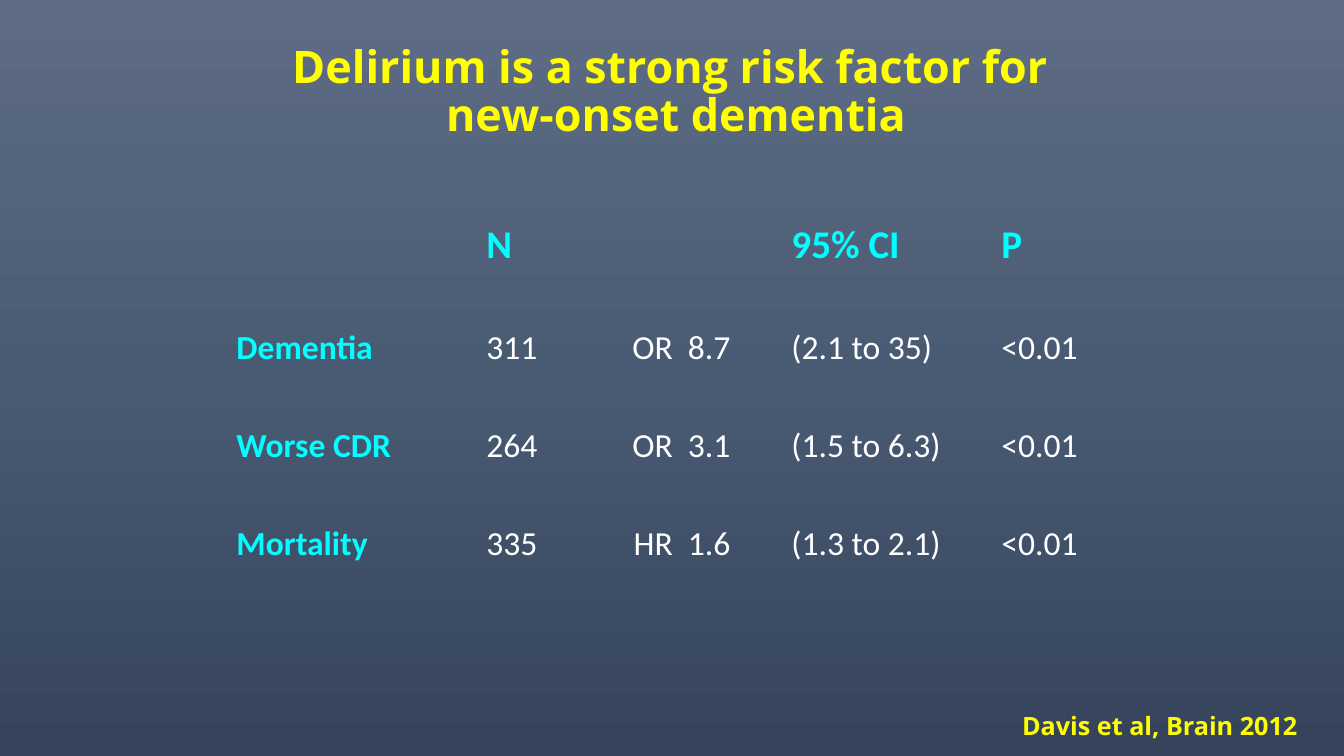
from copy import deepcopy

from pptx import Presentation
from pptx.dml.color import RGBColor
from pptx.enum.text import MSO_ANCHOR as ANCHOR, MSO_AUTO_SIZE as AUTO, PP_ALIGN as ALIGN
from pptx.oxml.ns import qn
from pptx.util import Pt

# Content
TITLE = ["Delirium is a strong risk factor for ", "new-onset dementia"]
ROWS = [
    ["", "N", "", "", "95% CI", "P"],
    ["Dementia", "311", "OR", "8.7", "(2.1 to 35)", "<0.01"],
    ["Worse CDR", "264", "OR", "3.1", "(1.5 to 6.3)", "<0.01"],
    ["Mortality", "335", "HR", "1.6", "(1.3 to 2.1)", "<0.01"],
]
CITATION = "Davis et al, Brain 2012"

# Look, lengths in points
COLORS = {"title": "FFFF00", "heading": "00FFFF", "value": "FFFFFF"}
BACKGROUND = [(0, "5E6D85"), (0.5, "495A73"), (1, "35445A")]
COL_WIDTHS = [178.5, 68.5, 75.5, 74, 150, 93.5]
ROW_HEIGHTS = [77, 70, 70, 70]
MEASURE_COL = 2
NO_STYLE = "{2D5ABB26-0587-4C30-8999-92F81FD0307C}"


def add_run(p, text, size, font, color, bold=True):
    r = p.add_run()
    r.text = text
    r.font.size, r.font.name, r.font.bold = Pt(size), font, bold
    r.font.color.rgb = RGBColor.from_string(COLORS[color])


prs = Presentation()
prs.slide_width, prs.slide_height = Pt(960), Pt(540)
s = prs.slides.add_slide(prs.slide_layouts[5])

# Background gradient, top to bottom
fill = s.background.fill
fill.gradient()
fill.gradient_angle = 270
stop_list = fill._fill._gradFill.find(qn("a:gsLst"))
stop_list.insert(1, deepcopy(stop_list[0]))
for stop, (position, color) in zip(fill.gradient_stops, BACKGROUND):
    stop.position = position
    stop.color.rgb = RGBColor.from_string(color)

# Title
title = s.shapes.title
title.left, title.top, title.width, title.height = Pt(146), Pt(21.6), Pt(674), Pt(90)
tf = title.text_frame
tf.auto_size, tf.vertical_anchor = AUTO.NONE, ANCHOR.MIDDLE
p = tf.paragraphs[0]
p.alignment, p.line_spacing = ALIGN.CENTER, 0.9
for i, line in enumerate(TITLE):
    if i:
        p.add_line_break()
    add_run(p, line, 32, "Open Sans", "title")

# Results table
table = s.shapes.add_table(len(ROWS), len(COL_WIDTHS), Pt(163.5), Pt(152.6),
                           Pt(sum(COL_WIDTHS)), Pt(sum(ROW_HEIGHTS))).table
table._tbl.tblPr.find(qn("a:tableStyleId")).text = NO_STYLE
table.first_row = table.horz_banding = False
for column, width in zip(table.columns, COL_WIDTHS):
    column.width = Pt(width)
for row, height in zip(table.rows, ROW_HEIGHTS):
    row.height = Pt(height)
for i, values in enumerate(ROWS):
    for j, text in enumerate(values):
        cell = table.cell(i, j)
        cell.fill.background()
        cell.margin_left = cell.margin_right = Pt(5.4)
        cell.margin_top = cell.margin_bottom = 0
        if not text:
            continue
        p = cell.text_frame.paragraphs[0]
        p.line_spacing = 1.15
        p.alignment = ALIGN.RIGHT if j == MEASURE_COL else ALIGN.LEFT
        heading = i == 0 or j == 0
        add_run(p, text, 28 if i == 0 else 24, "Calibri",
                "heading" if heading else "value", heading)

# Citation
tf = s.shapes.add_textbox(Pt(723), Pt(504), Pt(221), Pt(29)).text_frame
tf.word_wrap, tf.auto_size = False, AUTO.SHAPE_TO_FIT_TEXT
add_run(tf.paragraphs[0], CITATION, 18, "Open Sans", "title")

prs.save("out.pptx")
